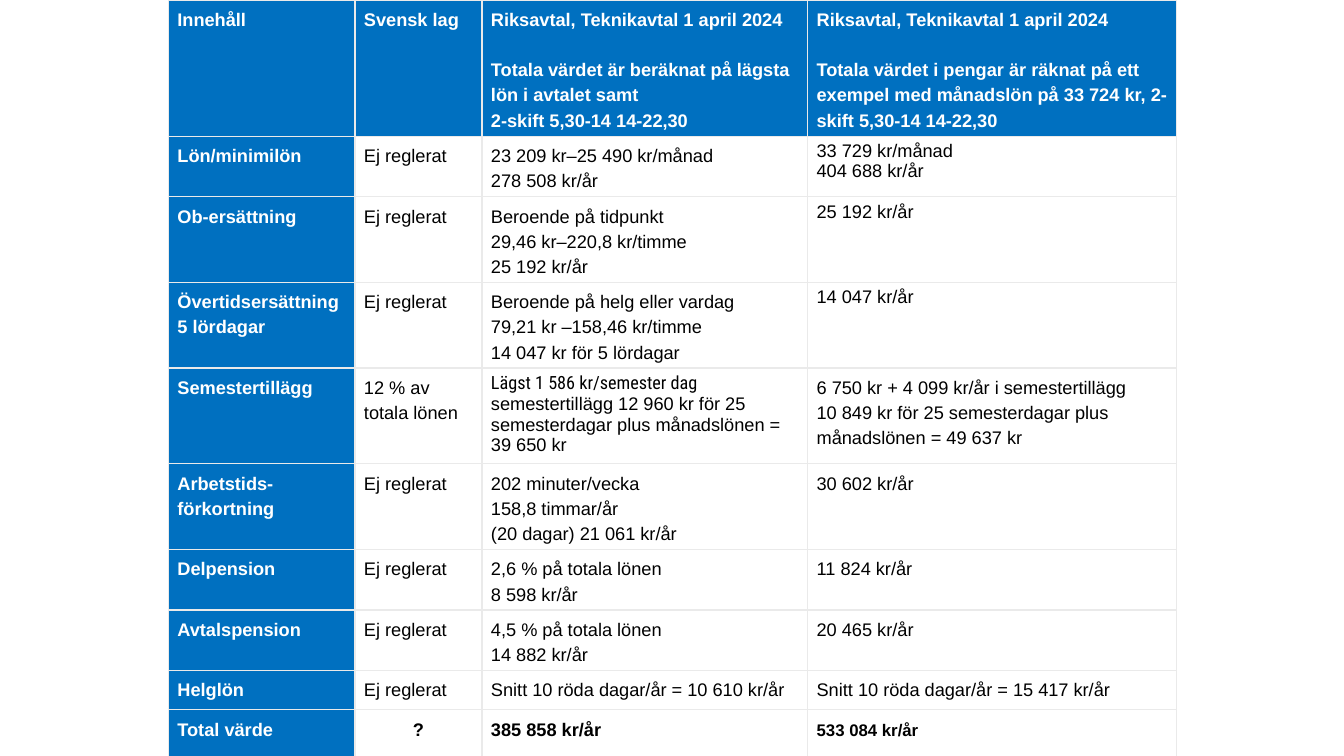
from dataclasses import dataclass

from lxml.etree import SubElement
from pptx import Presentation
from pptx.dml.color import RGBColor
from pptx.enum.text import PP_ALIGN as Align
from pptx.oxml.ns import qn
from pptx.table import _Cell as TableCell
from pptx.util import Inches, Pt

BLUE, WHITE, BLACK, GRID = "0070C0", "FFFFFF", "000000", "EAEAEA"
BODY_FONT, NARROW_FONT = "Arial", "Roboto Condensed"
COLUMN_WIDTHS = (1.85, 1.26, 3.23, 3.66)
UNREGULATED = "Ej reglerat"


@dataclass(frozen=True)
class Entry:
    text: str
    fixed_lines: bool = True
    narrow_lead: str = ""
    size: int = 13
    centred: bool = False
    gap_after_first: bool = False


@dataclass(frozen=True)
class BenefitRow:
    height: float
    label: str
    law: Entry
    minimum: Entry
    example: Entry

    def entries(self) -> tuple[Entry, ...]:
        return Entry(self.label), self.law, self.minimum, self.example


ROWS = (
    BenefitRow(
        1.31, "Innehåll", Entry("Svensk lag"),
        Entry("Riksavtal, Teknikavtal 1 april 2024\n"
              "Totala värdet är beräknat på lägsta lön i avtalet samt\n"
              "2-skift 5,30-14 14-22,30", gap_after_first=True),
        Entry("Riksavtal, Teknikavtal 1 april 2024\n"
              "Totala värdet i pengar är räknat på ett exempel med månadslön "
              "på 33 724 kr, 2-skift 5,30-14 14-22,30", gap_after_first=True)),
    BenefitRow(
        0.57, "Lön/minimilön", Entry(UNREGULATED),
        Entry("23 209 kr–25 490 kr/månad\n278 508 kr/år"),
        Entry("33 729 kr/månad\n404 688 kr/år", fixed_lines=False)),
    BenefitRow(
        0.82, "Ob-ersättning", Entry(UNREGULATED),
        Entry("Beroende på tidpunkt\n29,46 kr–220,8 kr/timme\n25 192 kr/år"),
        Entry("25 192 kr/år", fixed_lines=False)),
    BenefitRow(
        0.82, "Övertidsersättning\n5 lördagar", Entry(UNREGULATED),
        Entry("Beroende på helg eller vardag\n79,21 kr –158,46 kr/timme\n"
              "14 047 kr för 5 lördagar"),
        Entry("14 047 kr/år", fixed_lines=False)),
    BenefitRow(
        0.95, "Semestertillägg", Entry("12 % av totala lönen"),
        Entry("semestertillägg 12 960 kr för 25 semesterdagar plus "
              "månadslönen = 39 650 kr", fixed_lines=False,
              narrow_lead="Lägst 1 586 kr/semester dag "),
        Entry("6 750 kr + 4 099 kr/år i semestertillägg\n"
              "10 849 kr för 25 semesterdagar plus månadslönen = 49 637 kr")),
    BenefitRow(
        0.85, "Arbetstids-förkortning", Entry(UNREGULATED),
        Entry("202 minuter/vecka\n158,8 timmar/år\n(20 dagar) 21 061 kr/år"),
        Entry("30 602 kr/år")),
    BenefitRow(
        0.58, "Delpension", Entry(UNREGULATED),
        Entry("2,6 % på totala lönen\n8 598 kr/år"), Entry("11 824 kr/år")),
    BenefitRow(
        0.57, "Avtalspension", Entry(UNREGULATED),
        Entry("4,5 % på totala lönen\n14 882 kr/år"), Entry("20 465 kr/år")),
    BenefitRow(
        0.39, "Helglön", Entry(UNREGULATED),
        Entry("Snitt 10 röda dagar/år = 10 610 kr/år"),
        Entry("Snitt 10 röda dagar/år = 15 417 kr/år")),
    BenefitRow(
        0.66, "Total värde", Entry("?", centred=True),
        Entry("385 858 kr/år"), Entry("533 084 kr/år", size=12)),
)


def color(hex_code: str) -> RGBColor:
    return RGBColor.from_string(hex_code)


def draw_borders(cell: TableCell) -> None:
    properties = cell._tc.get_or_add_tcPr()
    for side in ("lnL", "lnR", "lnT", "lnB"):
        line = SubElement(properties, qn(f"a:{side}"), w=str(Pt(1)))
        fill = SubElement(line, qn("a:solidFill"))
        SubElement(fill, qn("a:srgbClr"), val=GRID)


def write_entry(cell: TableCell, entry: Entry, bold: bool, text_color: str) -> None:
    frame = cell.text_frame
    for index, line in enumerate(entry.text.split("\n")):
        paragraph = frame.add_paragraph() if index else frame.paragraphs[0]
        if entry.narrow_lead:
            lead = paragraph.add_run()
            lead.text = entry.narrow_lead
            lead.font.name = NARROW_FONT
        paragraph.add_run().text = line
        if entry.fixed_lines:
            paragraph.line_spacing = Pt(18)
        if entry.gap_after_first and index == 1:
            paragraph.space_before = Pt(18)
        paragraph.alignment = Align.CENTER if entry.centred else Align.LEFT
        font = paragraph.font
        font.name, font.size, font.bold = BODY_FONT, Pt(entry.size), bold
        font.color.rgb = color(text_color)


def format_cell(cell: TableCell, entry: Entry, filled: bool, bold: bool) -> None:
    cell.margin_left = cell.margin_right = Inches(0.09)
    cell.margin_top = cell.margin_bottom = Inches(0.05)
    draw_borders(cell)
    if filled:
        cell.fill.solid()
        cell.fill.fore_color.rgb = color(BLUE)
    else:
        cell.fill.background()
    write_entry(cell, entry, bold, WHITE if filled else BLACK)


def main() -> None:
    presentation = Presentation()
    presentation.slide_width, presentation.slide_height = Inches(13.33), Inches(7.5)
    slide = presentation.slides.add_slide(presentation.slide_layouts[6])
    table = slide.shapes.add_table(
        len(ROWS), len(COLUMN_WIDTHS), Inches(1.67), Inches(0),
        Inches(sum(COLUMN_WIDTHS)), Inches(sum(row.height for row in ROWS))).table
    table.first_row = table.horz_banding = False
    for column, width in zip(table.columns, COLUMN_WIDTHS):
        column.width = Inches(width)
    last_row = len(ROWS) - 1
    for row_index, row in enumerate(ROWS):
        table.rows[row_index].height = Inches(row.height)
        for column_index, entry in enumerate(row.entries()):
            filled = row_index == 0 or column_index == 0
            format_cell(table.cell(row_index, column_index), entry,
                        filled, filled or row_index == last_row)
    presentation.save("out.pptx")


if __name__ == "__main__":
    main()
